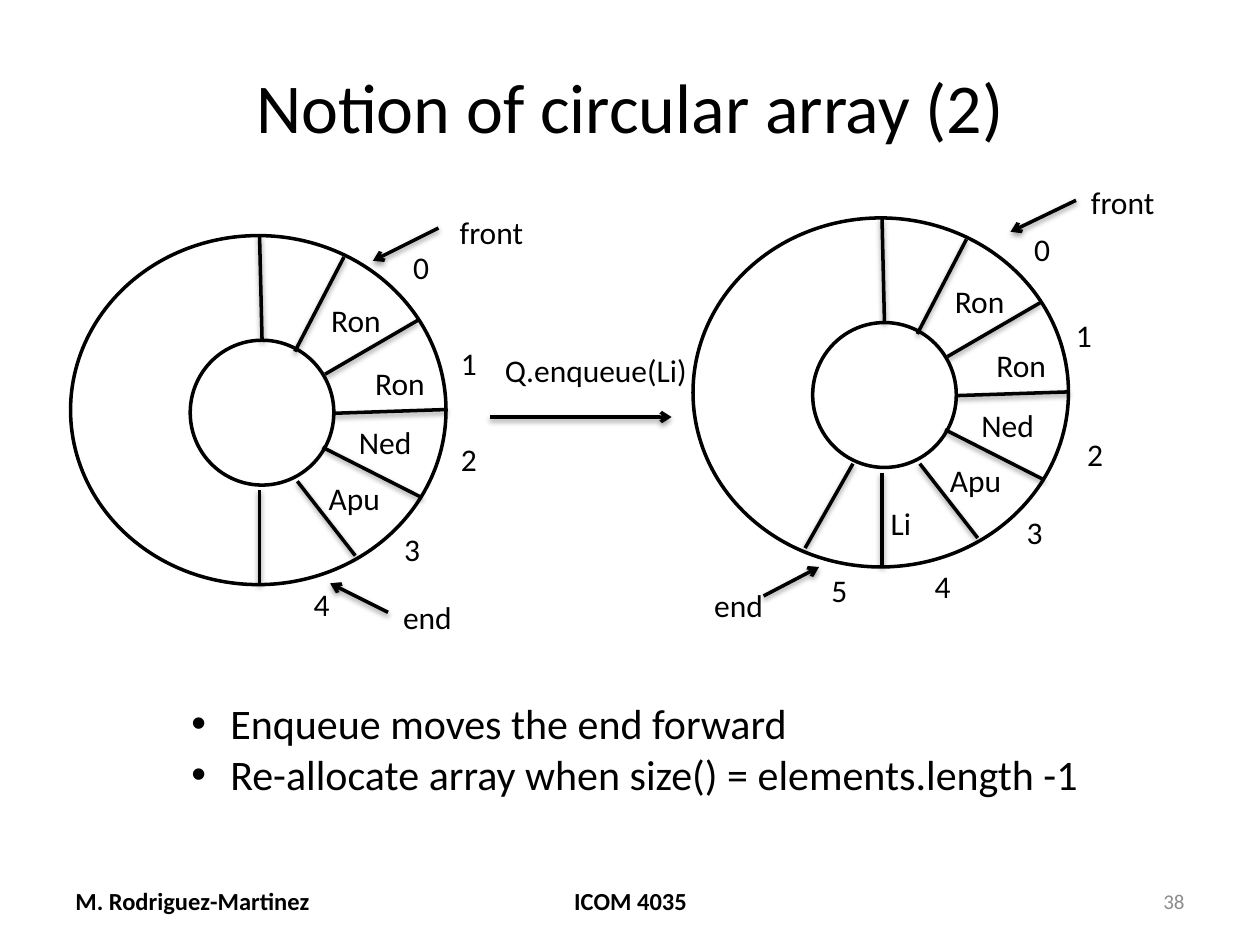
from lxml import etree
from pptx import Presentation
from pptx.dml.color import RGBColor
from pptx.enum.shapes import MSO_CONNECTOR, MSO_SHAPE
from pptx.enum.text import MSO_ANCHOR, PP_ALIGN
from pptx.oxml import parse_xml
from pptx.oxml.ns import nsdecls, qn
from pptx.util import Inches, Pt

COLORS = {"ink": "000000", "paper": "FFFFFF", "muted": "8C8C8C"}
FONT = "Calibri"
TITLE = "Notion of circular array (2)"
BULLETS = ["Enqueue moves the end forward",
           "Re-allocate array when size() = elements.length -1"]
FOOTERS = [  # text, left, width, alignment, format
    ("M. Rodriguez-Martinez", 0.5, 2.33, PP_ALIGN.LEFT, {"size": 14, "bold": True}),
    ("ICOM 4035", 3.42, 3.17, PP_ALIGN.CENTER, {"size": 14, "bold": True}),
    ("38", 7.17, 2.33, PP_ALIGN.RIGHT, {"size": 12, "color": "muted"}),
]

# Ring parts, measured from the ring's top left corner
OUTER_SIZE = (2.98, 2.77)
INNER_OFFSET, INNER_SIZE = (0.95, 0.83), (1.14, 1.15)
SPOKES = [
    (1.52, 0.83, 1.5, 0), (1.78, 0.92, 2.17, 0.17), (2.02, 1.1, 2.76, 0.67),
    (2.09, 1.41, 2.99, 1.38), (2.0, 1.68, 2.79, 2.08),
    (1.8, 1.95, 2.26, 2.54), (1.5, 2.02, 1.5, 2.77),
]
LABEL_WIDTHS = {"Ron": 0.6, "Ned": 0.62, "Apu": 0.61, "Li": 0.37,
                "front": 0.72, "end": 0.59, "Q.enqueue(Li)": 1.66}
DIGIT_WIDTH, LABEL_HEIGHT = 0.33, 0.4

RINGS = [
    {"origin": (0.56, 1.87), "extra_spokes": [],
     "labels": [("0", 3.18, 1.92), ("1", 3.56, 2.68), ("2", 3.56, 3.44),
                ("3", 3.11, 4.16), ("4", 2.39, 4.59),
                ("Ron", 2.53, 2.34), ("Ron", 2.88, 2.84), ("Ned", 2.75, 3.31),
                ("Apu", 2.51, 3.75), ("front", 3.55, 1.64), ("end", 3.1, 4.7)],
     "arrows": [(3.48, 1.81, 2.96, 2.07), (3.08, 4.86, 2.62, 4.63)]},
    {"origin": (5.5, 1.73), "extra_spokes": [(1.27, 1.95, 0.89, 2.62)],
     "labels": [("0", 8.11, 1.78), ("1", 8.44, 2.46), ("2", 8.53, 3.4),
                ("3", 8.05, 4.02), ("4", 7.32, 4.45), ("5", 6.5, 4.48),
                ("Ron", 7.48, 2.19), ("Ron", 7.81, 2.7), ("Ned", 7.69, 3.17),
                ("Apu", 7.44, 3.61), ("Li", 6.97, 3.95),
                ("front", 8.56, 1.4), ("end", 5.57, 4.6)],
     "arrows": [(8.54, 1.59, 8.02, 1.84), (6.06, 4.73, 6.5, 4.5)]},
]
STEP_LABEL = ("Q.enqueue(Li)", 3.91, 2.74)
STEP_ARROW = (3.89, 3.31, 5.33, 3.31)

SHADOW = (f'<a:effectLst {nsdecls("a")}><a:outerShdw blurRad="{Pt(3.1)}" dist="{Pt(1.6)}" '
          f'dir="5400000" rotWithShape="0"><a:srgbClr val="{COLORS["ink"]}">'
          '<a:alpha val="38000"/></a:srgbClr></a:outerShdw></a:effectLst>')


def color(name):
    return RGBColor.from_string(COLORS[name])


def write(para, text, size, **formats):
    span = para.add_run()
    span.text = text
    span.font.color.rgb = color(formats.pop("color", "ink"))
    for key, value in {"name": FONT, "size": Pt(size), **formats}.items():
        setattr(span.font, key, value)


def add_box(page, left, top, width, height, wrap=True, anchor=MSO_ANCHOR.TOP):
    box = page.shapes.add_textbox(*map(Inches, (left, top, width, height)))
    frame = box.text_frame
    frame.word_wrap = wrap
    frame.vertical_anchor = anchor
    return frame


def add_label(page, text, left, top):
    width = LABEL_WIDTHS.get(text, DIGIT_WIDTH)
    frame = add_box(page, left, top, width, LABEL_HEIGHT, wrap=False)
    write(frame.paragraphs[0], text, 18)


def add_line(page, ends, arrow=False):
    line = page.shapes.add_connector(MSO_CONNECTOR.STRAIGHT, *map(Inches, ends))
    line.line.color.rgb = color("ink")
    line.line.width = Pt(2)
    if arrow:
        etree.SubElement(line.line._get_or_add_ln(), qn("a:tailEnd"), type="arrow")
    line._element.spPr.append(parse_xml(SHADOW))


def add_circle(page, left, top, size):
    circle = page.shapes.add_shape(MSO_SHAPE.OVAL, *map(Inches, (left, top, *size)))
    circle.shadow.inherit = False
    circle.fill.solid()
    circle.fill.fore_color.rgb = color("paper")
    circle.line.color.rgb = color("ink")
    circle.line.width = Pt(2)


def add_ring(page, ring):
    left, top = ring["origin"]
    add_circle(page, left, top, OUTER_SIZE)
    add_circle(page, left + INNER_OFFSET[0], top + INNER_OFFSET[1], INNER_SIZE)
    for x1, y1, x2, y2 in SPOKES + ring["extra_spokes"]:
        add_line(page, (left + x1, top + y1, left + x2, top + y2))
    for label in ring["labels"]:
        add_label(page, *label)
    for ends in ring["arrows"]:
        add_line(page, ends, arrow=True)


def add_title(page):
    title = page.shapes.title
    title.left, title.top, title.width, title.height = map(Inches, (0.5, 0.3, 9, 1.07))
    title.text_frame.vertical_anchor = MSO_ANCHOR.MIDDLE
    para = title.text_frame.paragraphs[0]
    para.alignment = PP_ALIGN.CENTER
    write(para, TITLE, 40)


def add_bullets(page):
    frame = add_box(page, 1.42, 5.49, 7.34, 1.31)
    for index, text in enumerate(BULLETS):
        para = frame.add_paragraph() if index else frame.paragraphs[0]
        write(para, text, 24)
        properties = para._p.get_or_add_pPr()
        properties.set("marL", str(Inches(0.31)))
        properties.set("indent", str(-Inches(0.31)))
        etree.SubElement(properties, qn("a:buFont"), typeface="Arial")
        etree.SubElement(properties, qn("a:buChar"), char="•")


def main():
    deck = Presentation()
    deck.slide_width, deck.slide_height = Inches(10), Inches(7.5)
    page = deck.slides.add_slide(deck.slide_layouts[5])
    add_title(page)
    for text, left, width, alignment, formats in FOOTERS:
        para = add_box(page, left, 6.95, width, 0.4, anchor=MSO_ANCHOR.MIDDLE).paragraphs[0]
        para.alignment = alignment
        write(para, text, **formats)
    add_bullets(page)
    for ring in RINGS:
        add_ring(page, ring)
    add_line(page, STEP_ARROW, arrow=True)
    add_label(page, *STEP_LABEL)
    deck.save("out.pptx")


if __name__ == "__main__":
    main()
